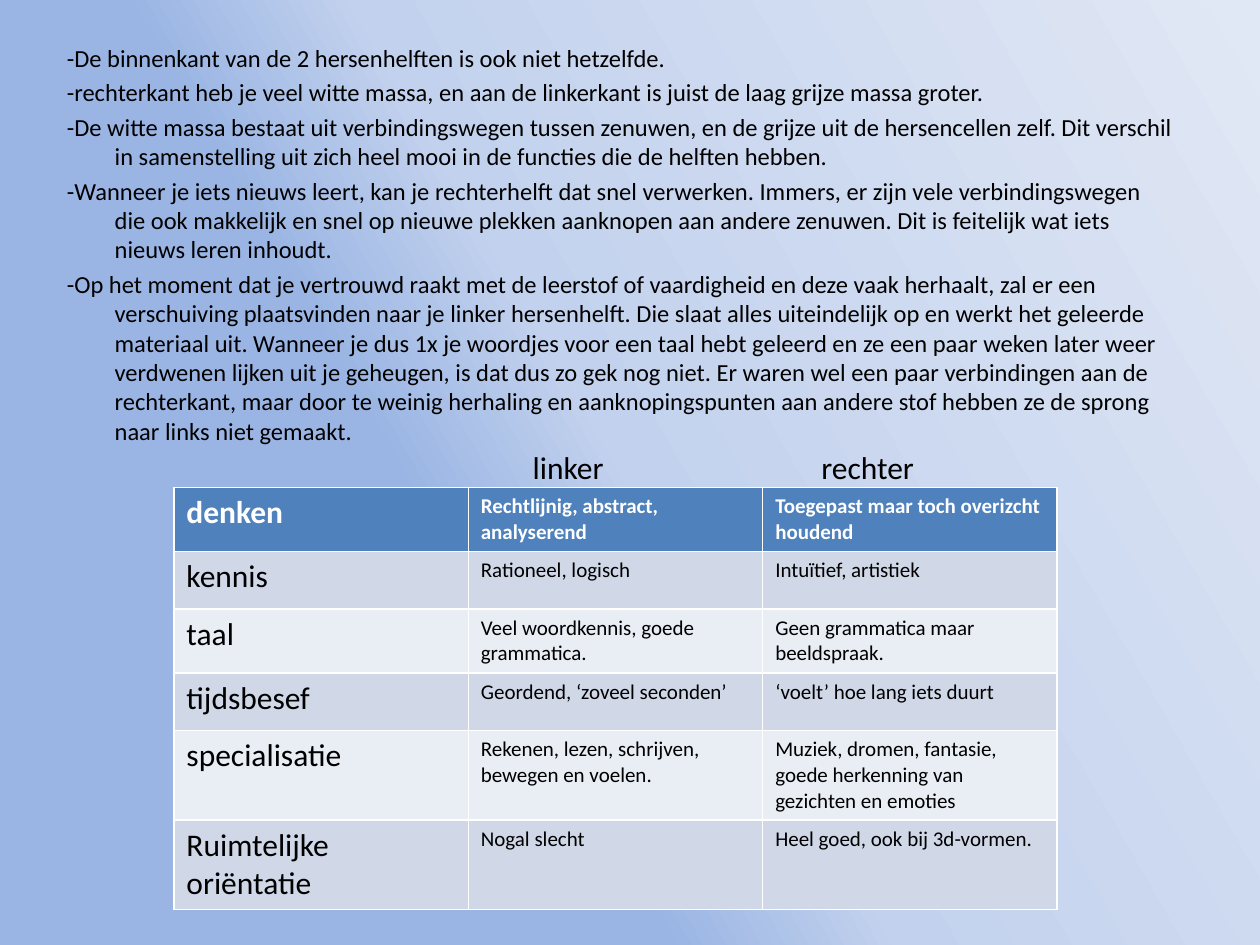
import copy

import pptx
import pptx.dml.color
import pptx.enum.text
import pptx.oxml.ns
import pptx.util
from lxml import etree

RGBColor = pptx.dml.color.RGBColor
BLACK = RGBColor(0x00, 0x00, 0x00)
WHITE = RGBColor(0xFF, 0xFF, 0xFF)
HEADER = RGBColor(0x4F, 0x81, 0xBD)
BANDS = [RGBColor(0xD0, 0xD8, 0xE8), RGBColor(0xE9, 0xED, 0xF4)]
GRADIENT = [
    (0.37, RGBColor(0x9A, 0xB5, 0xE4)),
    (0.5, RGBColor(0xC2, 0xD1, 0xED)),
    (1, RGBColor(0xE1, 0xE8, 0xF5)),
]
FONT = "Calibri"

BODY = [
    "-De binnenkant van de 2 hersenhelften is ook niet hetzelfde.",
    "-rechterkant heb je veel witte massa, en aan de linkerkant is juist de laag grijze massa groter.",
    "-De witte massa bestaat uit verbindingswegen tussen zenuwen, en de grijze uit de hersencellen zelf. "
    "Dit verschil in samenstelling uit zich heel mooi in de functies die de helften hebben.",
    "-Wanneer je iets nieuws leert, kan je rechterhelft dat snel verwerken. Immers, er zijn vele "
    "verbindingswegen die ook makkelijk en snel op nieuwe plekken aanknopen aan andere zenuwen. "
    "Dit is feitelijk wat iets nieuws leren inhoudt.",
    "-Op het moment dat je vertrouwd raakt met de leerstof of vaardigheid en deze vaak herhaalt, zal er "
    "een verschuiving plaatsvinden naar je linker hersenhelft. Die slaat alles uiteindelijk op en werkt "
    "het geleerde materiaal uit. Wanneer je dus 1x je woordjes voor een taal hebt geleerd en ze een paar "
    "weken later weer verdwenen lijken uit je geheugen, is dat dus zo gek nog niet. Er waren wel een paar "
    "verbindingen aan de rechterkant, maar door te weinig herhaling en aanknopingspunten aan andere stof "
    "hebben ze de sprong naar links niet gemaakt.",
]
ROWS = [
    (6.4, "denken", "Rechtlijnig, abstract, analyserend", "Toegepast maar toch overizcht houdend"),
    (6.1, "kennis", "Rationeel, logisch", "Intuïtief, artistiek"),
    (6.4, "taal", "Veel woordkennis, goede grammatica.", "Geen grammatica maar beeldspraak."),
    (6.1, "tijdsbesef", "Geordend, ‘zoveel seconden’", "‘voelt’ hoe lang iets duurt"),
    (8.9, "specialisatie", "Rekenen, lezen, schrijven, bewegen en voelen.",
     "Muziek, dromen, fantasie, goede herkenning van gezichten en emoties"),
    (8.9, "Ruimtelijke oriëntatie", "Nogal slecht", "Heel goed, ook bij 3d-vormen."),
]
LABELS = [("linker", 41.3, 7.7, False), ("rechter", 64.2, 10.2, True)]
COLUMN = 23.37

prs = pptx.Presentation()
prs.slide_width = pptx.util.Inches(10)
prs.slide_height = pptx.util.Inches(7.5)


def across(percent):
    return round(prs.slide_width * percent / 100)


def down(percent):
    return round(prs.slide_height * percent / 100)


def write(p, text, size=18, color=BLACK, bold=False):
    r = p.add_run()
    r.text = text
    r.font.name = FONT
    r.font.size = pptx.util.Pt(size)
    r.font.bold = bold
    r.font.color.rgb = color


def paint_background(s):
    fill = s.background.fill
    fill.gradient()
    fill.gradient_angle = 30
    first = fill.gradient_stops[0].color
    first.rgb = GRADIENT[0][1]
    stops = fill._fill._gradFill.find(pptx.oxml.ns.qn("a:gsLst"))
    stops.append(copy.deepcopy(stops[0]))
    for stop, (position, color) in zip(fill.gradient_stops, GRADIENT):
        stop.position = position
        stop.color.rgb = color


def add_body(s):
    sp = s.placeholders[1]
    sp.left, sp.top = across(4.3), down(3.9)
    sp.width, sp.height = across(90), down(113.9)
    tf = sp.text_frame
    tf.auto_size = pptx.enum.text.MSO_AUTO_SIZE.NONE
    for i, text in enumerate(BODY):
        p = tf.add_paragraph() if i else tf.paragraphs[0]
        write(p, text, size=14)
        pPr = p._p.get_or_add_pPr()
        pPr.set("marL", str(pptx.util.Inches(0.38)))
        pPr.set("indent", str(-pptx.util.Inches(0.38)))
        etree.SubElement(pPr, pptx.oxml.ns.qn("a:buNone"))


def add_comparison(s):
    height = sum(row[0] for row in ROWS)
    table = s.shapes.add_table(
        len(ROWS), 3, across(13.8), down(51.6), across(3 * COLUMN), down(height)).table
    for column in table.columns:
        column.width = across(COLUMN)
    for i, (share, *texts) in enumerate(ROWS):
        table.rows[i].height = down(share)
        for j, text in enumerate(texts):
            cell = table.cell(i, j)
            cell.fill.solid()
            cell.fill.fore_color.rgb = BANDS[(i - 1) % 2] if i else HEADER
            write(cell.text_frame.paragraphs[0], text, size=12 if j else 18,
                  color=BLACK if i else WHITE, bold=i == 0)


def add_labels(s):
    for text, left, width, wrap in LABELS:
        tf = s.shapes.add_textbox(across(left), down(46.8), across(width), down(5.4)).text_frame
        tf.word_wrap = wrap
        tf.auto_size = pptx.enum.text.MSO_AUTO_SIZE.SHAPE_TO_FIT_TEXT
        write(tf.paragraphs[0], text)


s = prs.slides.add_slide(prs.slide_layouts[1])
title = s.shapes.title.element
title.getparent().remove(title)
paint_background(s)
add_body(s)
add_comparison(s)
add_labels(s)
prs.save("out.pptx")
